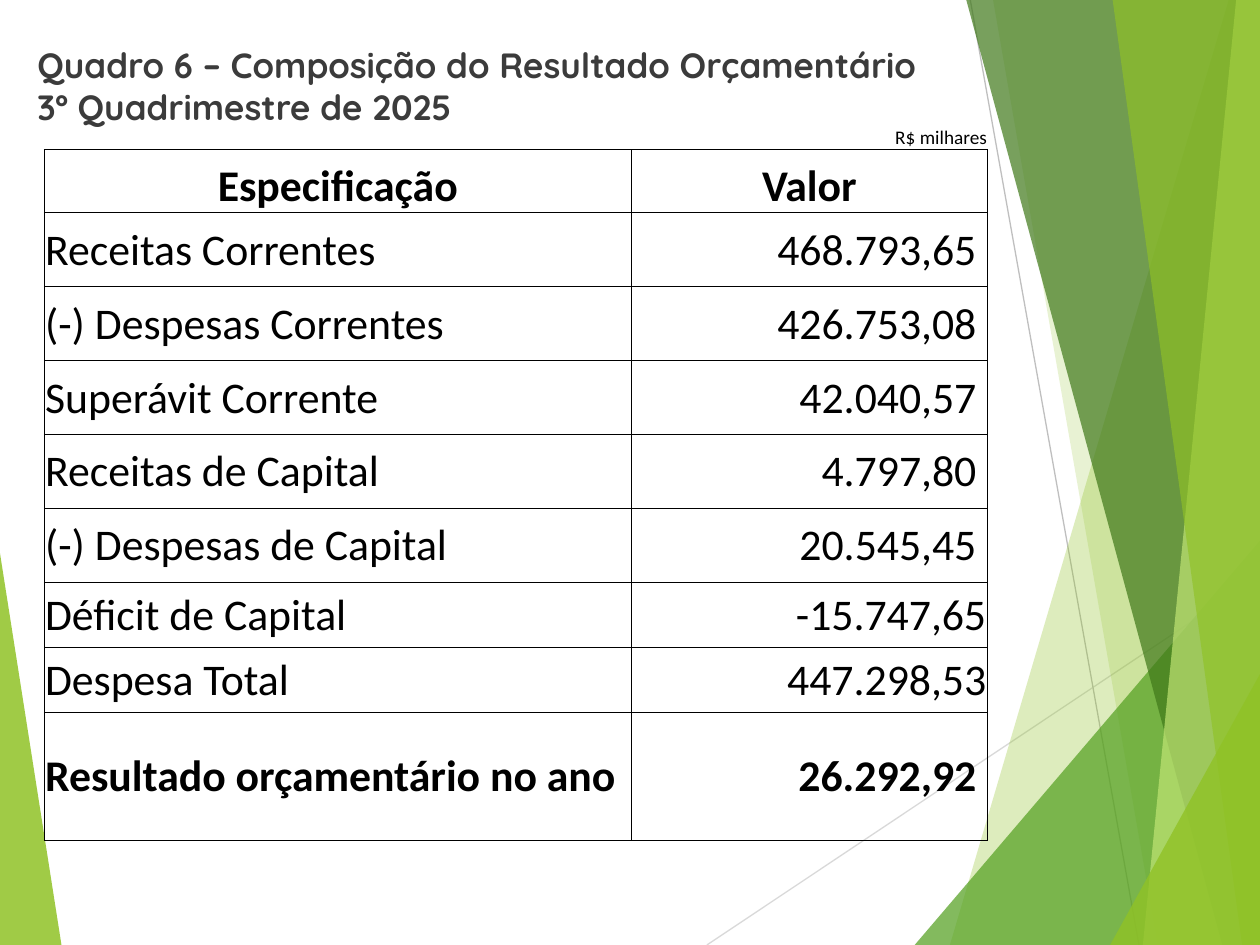
"""Build the budget result slide with its table and green side panels."""
from lxml.etree import SubElement
from pptx import Presentation
from pptx.dml.color import RGBColor
from pptx.enum.shapes import MSO_CONNECTOR
from pptx.enum.text import MSO_ANCHOR, MSO_AUTO_SIZE, PP_ALIGN
from pptx.oxml.ns import qn
from pptx.util import Cm, Pt

LIME = RGBColor(0x90, 0xC2, 0x26)
GREEN = RGBColor(0x54, 0xA0, 0x21)
DARK = RGBColor(0x3F, 0x78, 0x19)
PALE = RGBColor(0xC0, 0xE4, 0x74)
SILVER = RGBColor(0xD9, 0xD9, 0xD9)
GRAY = RGBColor(0xBF, 0xBF, 0xBF)
INK = RGBColor(0x3B, 0x3B, 0x3B)
BLACK = RGBColor(0, 0, 0)

W, H = 25.4, 19.05
TITLE = ["Quadro 6 – Composição do Resultado Orçamentário ", "3º Quadrimestre de 2025"]
UNIT = "R$ milhares"
HEAD = ("Especificação", "Valor")
ROWS = [
    ("Receitas Correntes", "468.793,65 ", 1.49),
    ("(-) Despesas Correntes", "426.753,08 ", 1.49),
    ("Superávit Corrente", "42.040,57 ", 1.49),
    ("Receitas de Capital", "4.797,80 ", 1.49),
    ("(-) Despesas de Capital", "20.545,45 ", 1.49),
    ("Déficit de Capital", "-15.747,65", 1.31),
    ("Despesa Total", "447.298,53", 1.31),
    ("Resultado orçamentário no ano", "26.292,92 ", 2.58),
]
COLS = [11.84, 3.18, 3.99]
HIGHS = [0.89, 1.27] + [high for _, _, high in ROWS]
LEFT, TOP = 0.89, 2.13

CORNER = ([(0, 11.15), (1.24, H), (0, H)], LIME, 85)
LINES = [
    ((14.25, H), (W, 11.61), SILVER),
    ((19.56, 0), (22.96, H), GRAY),
]


def band(top, low):
    return [(top, 0), (low, H), (W, H), (W, 0)]


def wedge(low, side):
    return [(low, H), (W, side), (W, H)]


PANELS = [
    (band(24.77, 19.15), LIME, 30),
    (band(20.02, 23.34), LIME, 20),
    (wedge(18.44, 10.9), GREEN, 72),
    (band(19.48, 24.64), DARK, 70),
    (band(24.92, 23.04), PALE, 70),
    (band(22.43, 25.04), LIME, 65),
    (wedge(22.38, 13.59), LIME, 80),
]


def put(frame, lines, size=25, bold=False, font="Calibri", color=BLACK, align=PP_ALIGN.LEFT):
    para = frame.paragraphs[0]
    para.alignment = align
    for i, line in enumerate(lines):
        if i:
            para.add_line_break()
        run = para.add_run()
        run.text = line
        run.font.size, run.font.bold, run.font.name = Pt(size), bold, font
        run.font.color.rgb = color


def panel(shapes, points, color, alpha):
    spots = [(Cm(x), Cm(y)) for x, y in points]
    pen = shapes.build_freeform(*spots[0])
    pen.add_line_segments(spots[1:], close=True)
    shape = pen.convert_to_shape()
    shape.shadow.inherit = False
    shape.line.fill.background()
    shape.fill.solid()
    shape.fill.fore_color.rgb = color
    tone = shape.element.spPr.find(".//" + qn("a:srgbClr"))
    SubElement(tone, qn("a:alpha"), val=str(alpha * 1000))


def rule(shapes, start, end, color):
    line = shapes.add_connector(MSO_CONNECTOR.STRAIGHT, *map(Cm, start + end))
    line.line.color.rgb = color
    line.line.width = Pt(0.75)
    SubElement(line.element.spPr, qn("a:effectLst"))


def frame_cell(cell, sides):
    props = cell._tc.get_or_add_tcPr()
    for side in "LRTB":
        edge = SubElement(props, qn("a:ln" + side), w=str(Pt(0.5)))
        if side in sides:
            fill = SubElement(edge, qn("a:solidFill"))
            SubElement(fill, qn("a:srgbClr"), val=str(BLACK))
        else:
            SubElement(edge, qn("a:noFill"))
    cell.fill.background()


def set_cell(cell, text, anchor=MSO_ANCHOR.MIDDLE, **style):
    cell.vertical_anchor = anchor
    put(cell.text_frame, [text], **style)


def add_grid(shapes):
    box = map(Cm, (LEFT, TOP, sum(COLS), sum(HIGHS)))
    grid = shapes.add_table(len(HIGHS), len(COLS), *box).table
    grid.first_row = grid.horz_banding = False
    for col, wide in zip(grid.columns, COLS):
        col.width = Cm(wide)
    for r, (row, high) in enumerate(zip(grid.rows, HIGHS)):
        row.height = Cm(high)
        pad = Cm(0.02 if r > 1 else 0)
        for cell in row.cells:
            cell.margin_left = cell.margin_right = cell.margin_top = pad
            cell.margin_bottom = 0
            frame_cell(cell, "LRTB" if r else "B")
        if r:
            grid.cell(r, 1).merge(grid.cell(r, 2))
    low = MSO_ANCHOR.BOTTOM
    set_cell(grid.cell(0, 2), UNIT, low, size=11, align=PP_ALIGN.RIGHT)
    for c, text in enumerate(HEAD):
        set_cell(grid.cell(1, c), text, low, bold=True, align=PP_ALIGN.CENTER)
    for r, (name, value, _) in enumerate(ROWS, 2):
        last = r == len(HIGHS) - 1
        set_cell(grid.cell(r, 0), name, bold=last)
        set_cell(grid.cell(r, 1), value, bold=last, align=PP_ALIGN.RIGHT)


def main():
    deck = Presentation()
    deck.slide_width, deck.slide_height = Cm(W), Cm(H)
    slide = deck.slides.add_slide(deck.slide_layouts[5])
    shapes = slide.shapes
    title = shapes.title
    panel(shapes, *CORNER)
    for line in LINES:
        rule(shapes, *line)
    for item in PANELS:
        panel(shapes, *item)
    title.element.getparent().append(title.element)
    title.left, title.top, title.width, title.height = map(Cm, (0.5, 0.74, 21.6, 0.84))
    frame = title.text_frame
    frame.word_wrap = True
    frame.auto_size = MSO_AUTO_SIZE.NONE
    frame.vertical_anchor = MSO_ANCHOR.TOP
    put(frame, TITLE, size=20, bold=True, font="Quicksand", color=INK)
    add_grid(shapes)
    deck.save("out.pptx")


if __name__ == "__main__":
    main()
